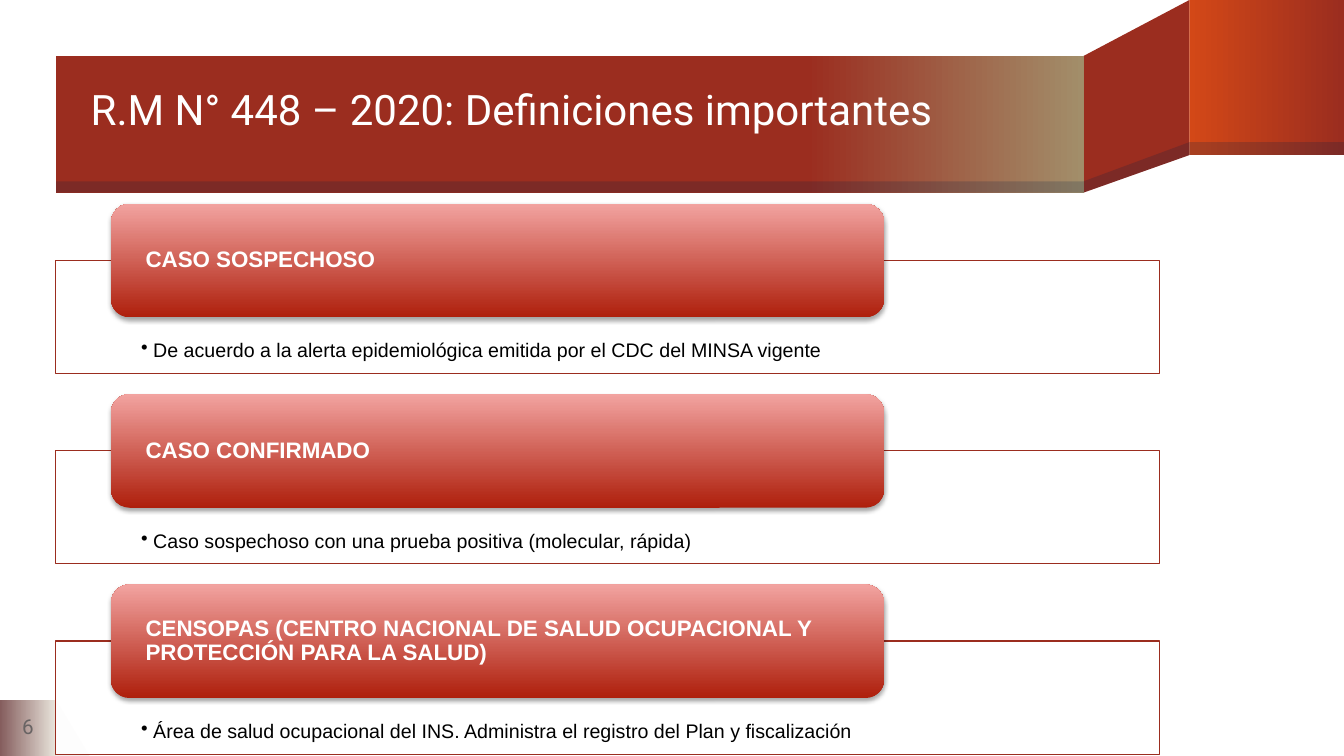
"""Builds the slide on the definitions of R.M N° 448 – 2020."""
from copy import deepcopy

from pptx import Presentation
from pptx import util as u
from pptx.dml import color
from pptx.enum import shapes, text
from pptx.oxml import parse_xml
from pptx.oxml.ns import nsdecls, qn

COLUMNS = 24
RED, ORANGE, SAND, MAUVE, NAVY = "9B2D1F", "D34817", "A28E6A", "855D5D", "001F46"
CASES = [
    ("CASO SOSPECHOSO",
     "De acuerdo a la alerta epidemiológica emitida por el CDC del MINSA vigente"),
    ("CASO CONFIRMADO",
     "Caso sospechoso con una prueba positiva (molecular, rápida)"),
    ("CENSOPAS (CENTRO NACIONAL DE SALUD OCUPACIONAL Y PROTECCIÓN PARA LA SALUD)",
     "Área de salud ocupacional del INS. Administra el registro del Plan y fiscalización"),
]


def rgb(code):
    """Turn a hex string into a colour."""
    return color.RGBColor.from_string(code)


class Board:
    """Draws styled elements on a slide with a grid of square cells."""

    def __init__(self, deck):
        """Add a title-only slide and work out the cell size."""
        self.slide = deck.slides.add_slide(deck.slide_layouts[5])
        self.cell = deck.slide_width / COLUMNS

    def cells(self, *counts):
        """Convert counts of cells to lengths."""
        return [u.Emu(round(count * self.cell)) for count in counts]

    def paint(self, shape, fill, opacity=100):
        """Give a shape a solid fill and no line or shadow."""
        shape.shadow.inherit = False
        shape.line.fill.background()
        shape.fill.solid()
        shape.fill.fore_color.rgb = rgb(fill)
        if opacity < 100:
            tint = shape._element.spPr.find(qn("a:solidFill"))[0]
            tint.append(parse_xml(f'<a:alpha {nsdecls("a")} val="{opacity * 1000}"/>'))
        return shape

    def block(self, area, fill, opacity=100, kind=shapes.MSO_SHAPE.RECTANGLE):
        """Draw a preset shape over an area of the grid."""
        shape = self.slide.shapes.add_shape(kind, *self.cells(*area))
        return self.paint(shape, fill, opacity)

    def fade(self, shape, stops, angle=0):
        """Fill a shape with a linear gradient."""
        shape.fill.gradient()
        shape.fill.gradient_angle = angle
        stop_list = shape._element.spPr.find(qn("a:gradFill")).find(qn("a:gsLst"))
        for _ in stops[2:]:
            stop_list.append(deepcopy(stop_list[-1]))
        for stop, (position, code) in zip(shape.fill.gradient_stops, stops):
            stop.position = position
            stop.color.rgb = rgb(code)
        return shape

    def outline(self, corners, fill, opacity=100):
        """Draw a closed polygon through corners of the grid."""
        start, *others = [self.cells(*corner) for corner in corners]
        builder = self.slide.shapes.build_freeform(*start, scale=1.0)
        builder.add_line_segments(others, close=True)
        return self.paint(builder.convert_to_shape(), fill, opacity)

    def label(self, shape, words, size, code, font="Arial", bold=False,
              align=text.PP_ALIGN.LEFT, anchor=text.MSO_ANCHOR.MIDDLE,
              insets=(0, 0, 0, 0)):
        """Put one formatted paragraph in a shape."""
        frame = shape.text_frame
        frame.text = words
        frame.word_wrap = True
        frame.auto_size = text.MSO_AUTO_SIZE.NONE
        frame.vertical_anchor = anchor
        (frame.margin_left, frame.margin_top,
         frame.margin_right, frame.margin_bottom) = self.cells(*insets)
        line = frame.paragraphs[0]
        line.alignment = align
        line.line_spacing = 0.9
        style = line.runs[0].font
        style.name, style.size, style.bold = font, u.Pt(size), bold
        style.color.rgb = rgb(code)
        return line

    def title(self, area, words):
        """Place and format the title placeholder on top of the ribbon."""
        heading = self.slide.shapes.title
        heading.left, heading.top, heading.width, heading.height = self.cells(*area)
        self.label(heading, words, 30, "FFFFFF", font="Roboto")
        self.slide.shapes._spTree.append(heading._element)

    def bullet(self, line):
        """Give a paragraph a hanging bullet."""
        line.level = 1
        props = line._p.get_or_add_pPr()
        hang = u.Inches(0.12)
        props.set("marL", str(int(hang)))
        props.set("indent", str(-int(hang)))
        props.append(parse_xml(f'<a:buChar {nsdecls("a")} char="•"/>'))

    def cast_shadow(self, shape):
        """Add a soft shadow below a shape."""
        effects = shape._element.spPr.find(qn("a:effectLst"))
        effects.append(parse_xml(
            f'<a:outerShdw {nsdecls("a")} blurRad="{int(u.Pt(3.1))}" '
            f'dist="{int(u.Pt(1.8))}" dir="5400000" rotWithShape="0">'
            '<a:srgbClr val="000000"><a:alpha val="35000"/></a:srgbClr></a:outerShdw>'))

    def case(self, top, name, definition):
        """Draw a definition box with its name tab."""
        box = self.block((0.99, top + 1.01, 19.71, 2.02), "FFFFFF", 90)
        box.line.color.rgb = rgb(RED)
        box.line.width = u.Pt(0.75)
        self.bullet(self.label(box, definition, 14, "000000",
                               anchor=text.MSO_ANCHOR.TOP,
                               insets=(1.53, 1.44, 1.53, 0.2)))
        tab = self.block((1.98, top, 13.81, 2.03), RED,
                         kind=shapes.MSO_SHAPE.ROUNDED_RECTANGLE)
        self.fade(tab, [(0, "AE1F0C"), (1, "F2A3A0")], angle=90)
        self.cast_shadow(tab)
        self.label(tab, name, 16, "FFFFFF", bold=True, insets=(0.52, 0, 0.52, 0))


def main():
    """Build and save the slide."""
    deck = Presentation()
    deck.slide_width, deck.slide_height = u.Inches(13.33), u.Inches(7.5)
    board = Board(deck)

    board.block((1, 12.5, 0.6, 1), MAUVE, 10, shapes.MSO_SHAPE.RIGHT_TRIANGLE)
    page = board.block((0, 12.5, 1, 1), MAUVE)
    board.fade(page, [(0, MAUVE), (1, "E9E5DC")])
    board.label(page, "6", 14.7, "696464", font="Roboto", align=text.PP_ALIGN.CENTER)

    fold, turn, end = 19.35, 21.24, COLUMNS
    front_base, back_base = 3.44, 2.77
    front_edge, back_edge = 3.24, 2.54
    board.outline([(turn, 0), (fold, 1), (fold, front_base), (turn, back_base)], RED)
    back = board.block((turn, 0, end - turn, back_base), ORANGE)
    board.fade(back, [(0, ORANGE), (1, RED)])
    front = board.block((1, 1, fold - 1, front_base - 1), RED)
    board.fade(front, [(0, RED), (0.73, RED), (1, SAND)])
    board.outline([(turn, back_edge), (fold, front_edge),
                   (fold, front_base), (turn, back_base)], NAVY, 20)
    board.block((turn, back_edge, end - turn, back_base - back_edge), NAVY, 20)
    board.block((1, front_edge, fold - 1, front_base - front_edge), NAVY, 20)
    board.title((1.62, 0.79, 17.73, 2.41), "R.M N° 448 – 2020: Definiciones importantes")

    for row, (name, definition) in enumerate(CASES):
        board.case(3.64 + 3.4 * row, name, definition)
    deck.save("out.pptx")


if __name__ == "__main__":
    main()
